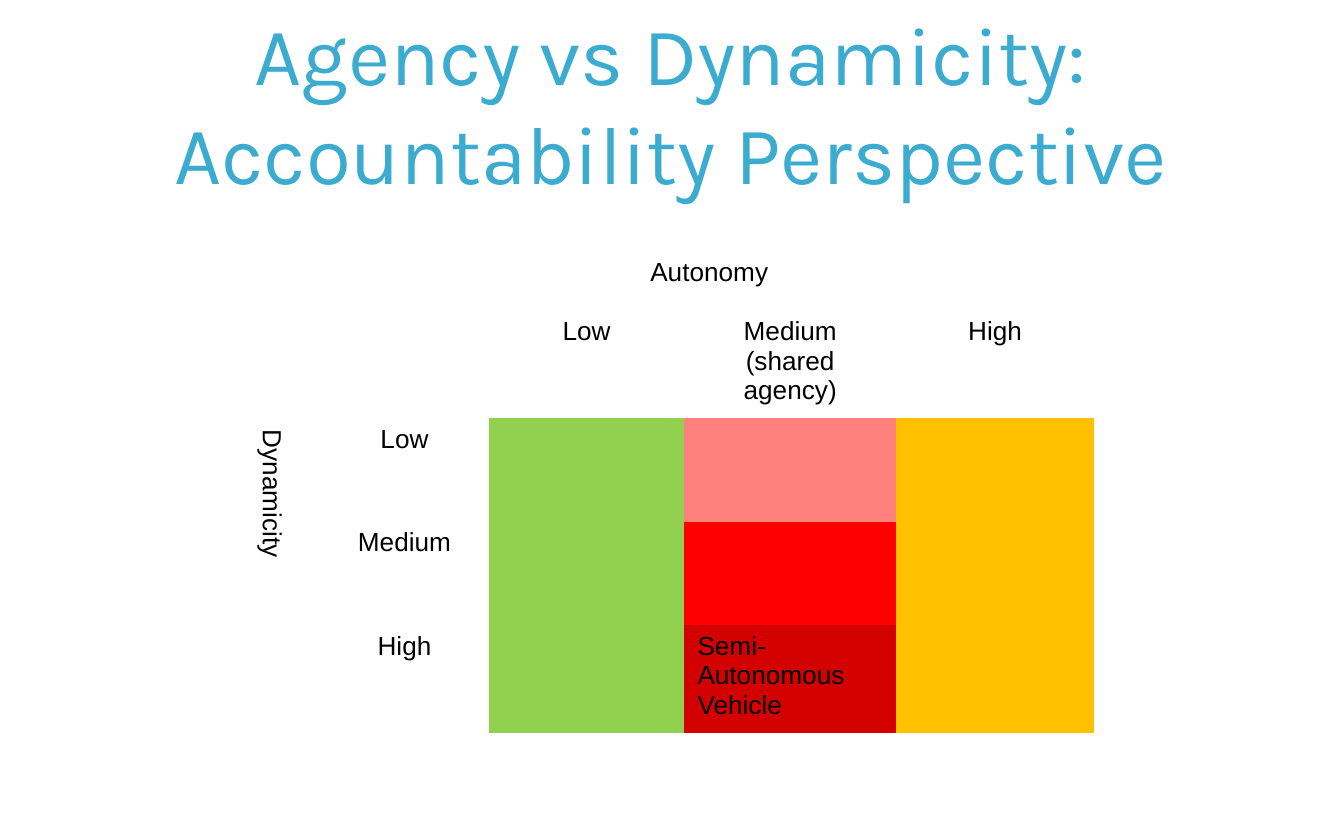
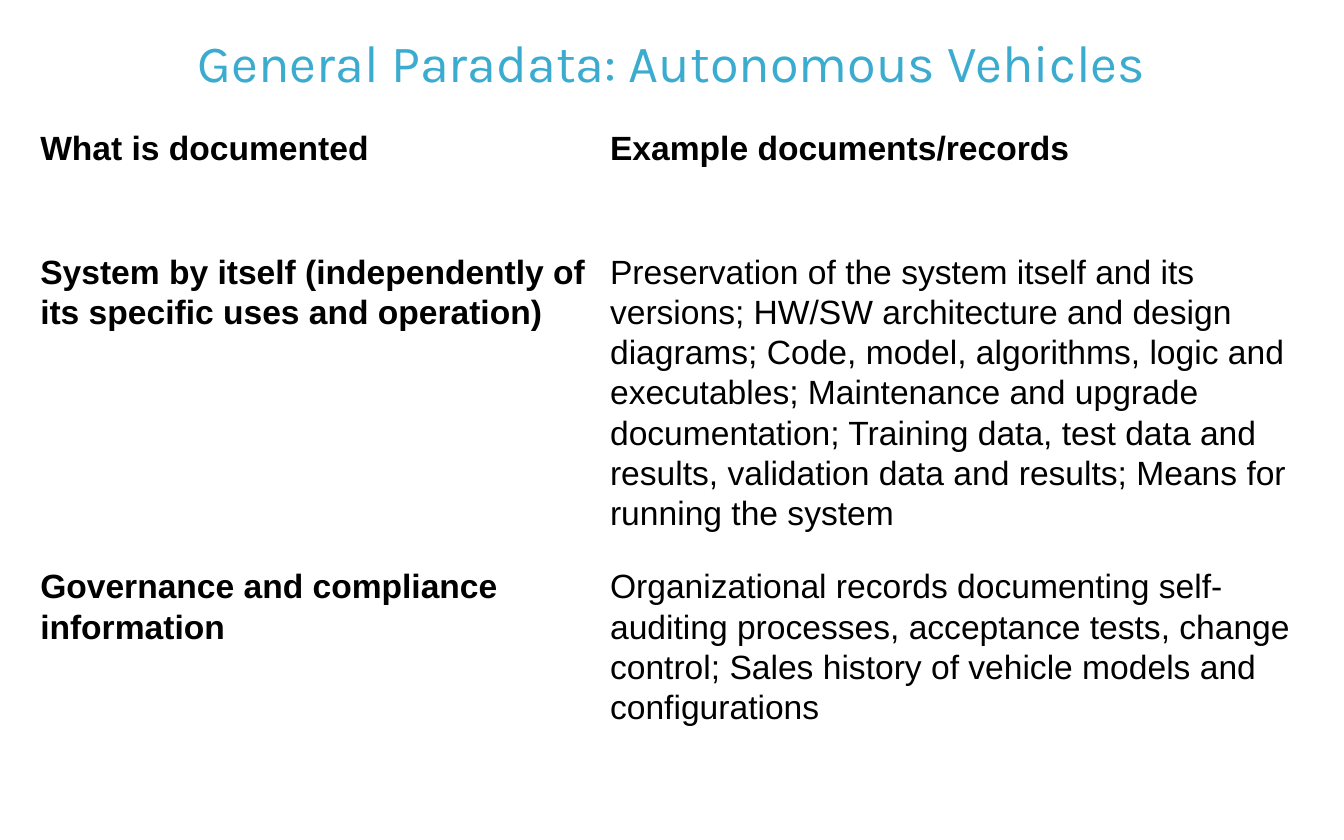
import pptx
import pptx.util
import pptx.dml.color
import pptx.enum.text

Inches = pptx.util.Inches
ALIGN = pptx.enum.text.PP_ALIGN
ANCHOR = pptx.enum.text.MSO_ANCHOR
FIT = pptx.enum.text.MSO_AUTO_SIZE

COLORS = {
    "title": "3BACCF",
    "text": "000000",
    "green": "92D050",
    "pink": "FF817D",
    "red": "FF0000",
    "dark": "D20001",
    "amber": "FFC000",
}
PLAIN = "{2D5ABB26-0587-4C30-8999-92F81FD0307C}"
LEVELS = ["Low", "Medium", "High"]
HEADS = ["Low", "Medium (shared agency)", "High"]
MIDDLE = ["pink", "red", "dark"]
RECORDS = [
    ("What is documented", "Example documents/records"),
    (
        "System by itself (independently of its specific uses and operation)",
        "Preservation of the system itself and its versions; HW/SW architecture "
        "and design diagrams; Code, model, algorithms, logic and executables; "
        "Maintenance and upgrade documentation; Training data, test data and "
        "results, validation data and results; Means for running the system",
    ),
    (
        "Governance and compliance information",
        "Organizational records documenting self-auditing processes, acceptance "
        "tests, change control; Sales history of vehicle models and configurations",
    ),
]


def write(frame, words, size=14, font="Arial", color="text", bold=False,
          align=ALIGN.LEFT, space=None):
    line = frame.paragraphs[0]
    line.text = words
    line.alignment = align
    line.line_spacing = space
    line.font.size = pptx.util.Pt(size)
    line.font.name = font
    line.font.bold = bold
    line.font.color.rgb = pptx.dml.color.RGBColor.from_string(COLORS[color])


def add_title(slide, box, words, size):
    frame = slide.shapes.add_textbox(*map(Inches, box)).text_frame
    frame.word_wrap = True
    frame.vertical_anchor = ANCHOR.MIDDLE
    write(frame, words, size=size, font="Karla", color="title", align=ALIGN.CENTER)


def add_label(slide, box, words, turn=0):
    label = slide.shapes.add_textbox(*map(Inches, box))
    label.rotation = turn
    frame = label.text_frame
    frame.word_wrap = False
    frame.auto_size = FIT.SHAPE_TO_FIT_TEXT
    write(frame, words)


def add_grid(slide, box, widths, heights):
    frame = slide.shapes.add_table(len(heights), len(widths), *map(Inches, box))
    grid = frame.table
    grid.first_row = False
    grid.horz_banding = False
    grid._tbl.tblPr[0].text = PLAIN
    for column, width in zip(grid.columns, widths):
        column.width = Inches(width)
    for row, height in zip(grid.rows, heights):
        row.height = Inches(height)
    for cell in grid.iter_cells():
        cell.fill.background()
    return grid


def paint(cell, color):
    cell.fill.solid()
    cell.fill.fore_color.rgb = pptx.dml.color.RGBColor.from_string(COLORS[color])


def add_matrix(slide, box):
    left, top, width, height = box
    grid = add_grid(slide, box, [0.71, 1.26, 1.45, 1.58, 1.47], [0.58] + [0.77] * 4)
    grid.cell(0, 1).merge(grid.cell(0, 4))
    grid.cell(1, 0).merge(grid.cell(4, 0))
    for col, head in enumerate(HEADS, 2):
        write(grid.cell(1, col).text_frame, head, align=ALIGN.CENTER)
    for row, (level, shade) in enumerate(zip(LEVELS, MIDDLE), 2):
        write(grid.cell(row, 1).text_frame, level, align=ALIGN.CENTER)
        for col, color in enumerate(["green", shade, "amber"], 2):
            paint(grid.cell(row, col), color)
    write(grid.cell(4, 3).text_frame, "Semi-Autonomous Vehicle")
    add_label(slide, (left - 0.22, top + 1.78, 1.16, 0.34), "Dynamicity", turn=90)
    add_label(slide, (left + 3.07, top + 0.12, 1.08, 0.34), "Autonomy")


def add_records(slide, box):
    grid = add_grid(slide, box, [4.24, 5.15], [0.92, 2.34, 1.39])
    for row, pair in enumerate(RECORDS):
        for col, words in enumerate(pair):
            cell = grid.cell(row, col)
            cell.margin_left = cell.margin_right = Inches(0.04)
            cell.margin_top = cell.margin_bottom = 0
            write(cell.text_frame, words, size=18, bold=row == 0 or col == 0, space=1.07)


def main():
    deck = pptx.Presentation()
    deck.slide_width = Inches(10)
    deck.slide_height = Inches(6.25)
    blank = deck.slide_layouts[6]

    slide = deck.slides.add_slide(blank)
    add_title(slide, (0.35, 0.24, 9.29, 1.04),
              "Agency vs Dynamicity: Accountability Perspective", 44)
    add_matrix(slide, (1.67, 1.73, 6.47, 3.66))

    slide = deck.slides.add_slide(blank)
    add_title(slide, (0.35, 0.09, 9.29, 0.73),
              "General Paradata: Autonomous Vehicles", 28)
    add_records(slide, (0.26, 0.95, 9.39, 4.65))

    deck.save("out.pptx")


if __name__ == "__main__":
    main()
